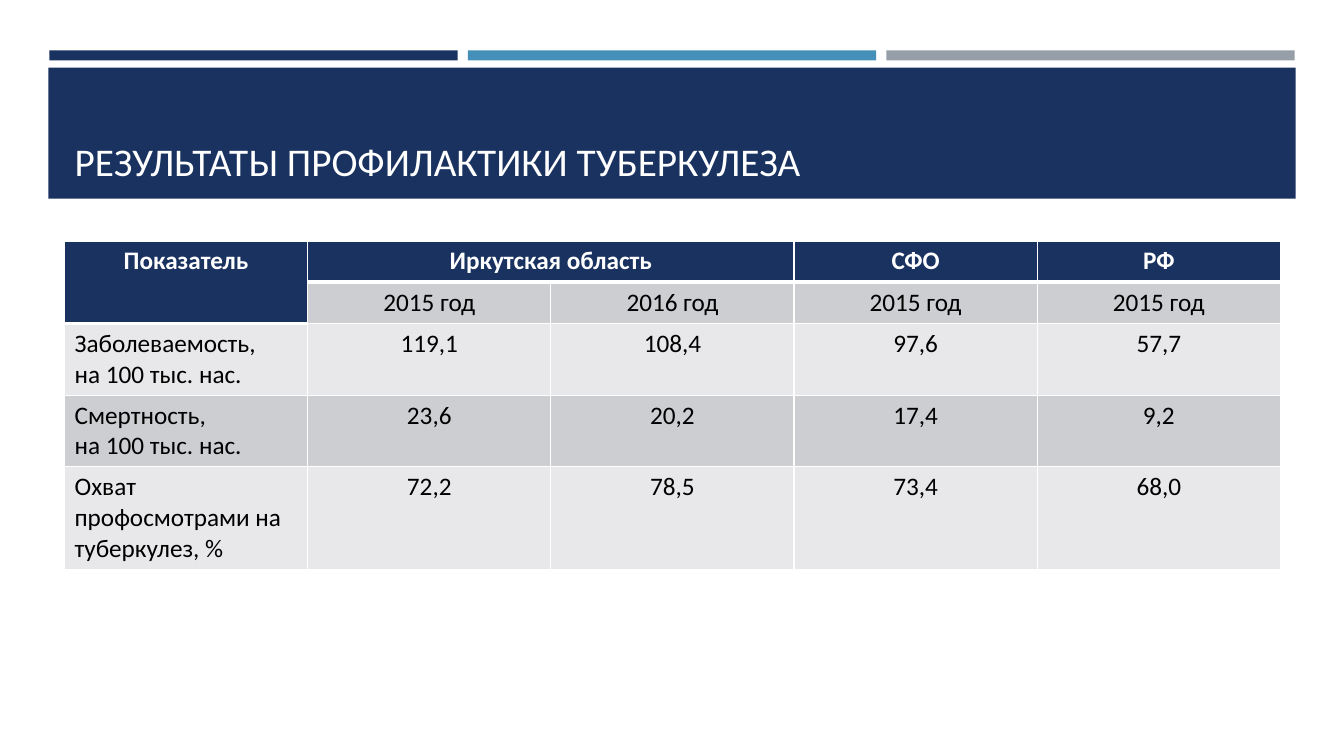
"""Build the slide on the results of tuberculosis prevention."""
from lxml import etree
from pptx import Presentation
from pptx.dml.color import RGBColor
from pptx.enum import shapes, text
from pptx.oxml import ns
from pptx.util import Inches, Pt

TITLE = "РЕЗУЛЬТАТЫ ПРОФИЛАКТИКИ ТУБЕРКУЛЕЗА"
ROWS = [
    ["Показатель", "Иркутская область", "", "СФО", "РФ"],
    ["", "2015 год", "2016 год", "2015 год", "2015 год"],
    ["Заболеваемость,\nна 100 тыс. нас.", "119,1", "108,4", "97,6", "57,7"],
    ["Смертность,\nна 100 тыс. нас.", "23,6", "20,2", "17,4", "9,2"],
    ["Охват профосмотрами на туберкулез, %", "72,2", "78,5", "73,4", "68,0"],
]
ROW_HEIGHTS = [0.41, 0.41, 0.7, 0.7, 0.99]
FONT = "Calibri"
NAVY, BLUE, GRAY = "1A3260", "4590B8", "969FA7"
WHITE, BLACK = "FFFFFF", "000000"
DARK_BAND, LIGHT_BAND = "CDCED2", "E8E8EA"
LEFT, WIDTH = 0.64, 12.06


def color(value):
    return RGBColor.from_string(value)


def style_font(paragraph, size, value, bold=False):
    font = paragraph.font
    font.name, font.size, font.bold = FONT, Pt(size), bold
    font.color.rgb = color(value)


def add_bar(slide, left, top, width, height, fill):
    bar = slide.shapes.add_shape(
        shapes.MSO_SHAPE.RECTANGLE, *map(Inches, (left, top, width, height)))
    bar.shadow.inherit = False
    bar.fill.solid()
    bar.fill.fore_color.rgb = color(fill)
    bar.line.fill.background()


def add_borders(cell, widths):
    properties = cell._tc.get_or_add_tcPr()
    for side, width in widths.items():
        line = etree.SubElement(properties, ns.qn(f"a:ln{side}"), w=str(Pt(width)))
        fill = etree.SubElement(line, ns.qn("a:solidFill"))
        etree.SubElement(fill, ns.qn("a:srgbClr"), val=WHITE)


def add_results(slide):
    row_count, column_count = len(ROWS), len(ROWS[0])
    table = slide.shapes.add_table(
        row_count, column_count,
        *map(Inches, (LEFT, 2.39, WIDTH, sum(ROW_HEIGHTS)))).table
    for row, height in zip(table.rows, ROW_HEIGHTS):
        row.height = Inches(height)
    for column in table.columns:
        column.width = Inches(WIDTH / column_count)
    table.cell(0, 0).merge(table.cell(1, 0))
    table.cell(0, 1).merge(table.cell(0, 2))

    for r, values in enumerate(ROWS):
        for c, value in enumerate(values):
            cell = table.cell(r, c)
            header = r == 0 or (r == 1 and c == 0)
            widths = {"L": 1, "R": 1, "B": 3 if header else 1}
            if r == 0:
                widths["T"] = 1
            add_borders(cell, widths)
            band = DARK_BAND if r % 2 else LIGHT_BAND
            cell.fill.solid()
            cell.fill.fore_color.rgb = color(NAVY if header else band)
            if not value:
                continue
            cell.text = value
            centered = header or c > 0
            for paragraph in cell.text_frame.paragraphs:
                style_font(paragraph, 18, WHITE if header else BLACK, header)
                paragraph.alignment = (
                    text.PP_ALIGN.CENTER if centered else text.PP_ALIGN.LEFT)


def main():
    deck = Presentation()
    deck.slide_width, deck.slide_height = Inches(13.33), Inches(7.5)
    slide = deck.slides.add_slide(deck.slide_layouts[5])

    for i, fill in enumerate([NAVY, BLUE, GRAY]):
        add_bar(slide, 0.49 + i * 4.15, 0.5, 4.05, 0.1, fill)
    add_bar(slide, 0.48, 0.67, 12.37, 1.3, NAVY)

    title = slide.shapes.title
    slide.shapes.element.append(title.element)
    title.left, title.top, title.width, title.height = map(
        Inches, (LEFT, 0.77, WIDTH, 1.11))
    title.text = TITLE
    title.text_frame.vertical_anchor = text.MSO_ANCHOR.BOTTOM
    heading = title.text_frame.paragraphs[0]
    heading.alignment = text.PP_ALIGN.LEFT
    style_font(heading, 28, WHITE)

    add_results(slide)
    deck.save("out.pptx")


if __name__ == "__main__":
    main()
